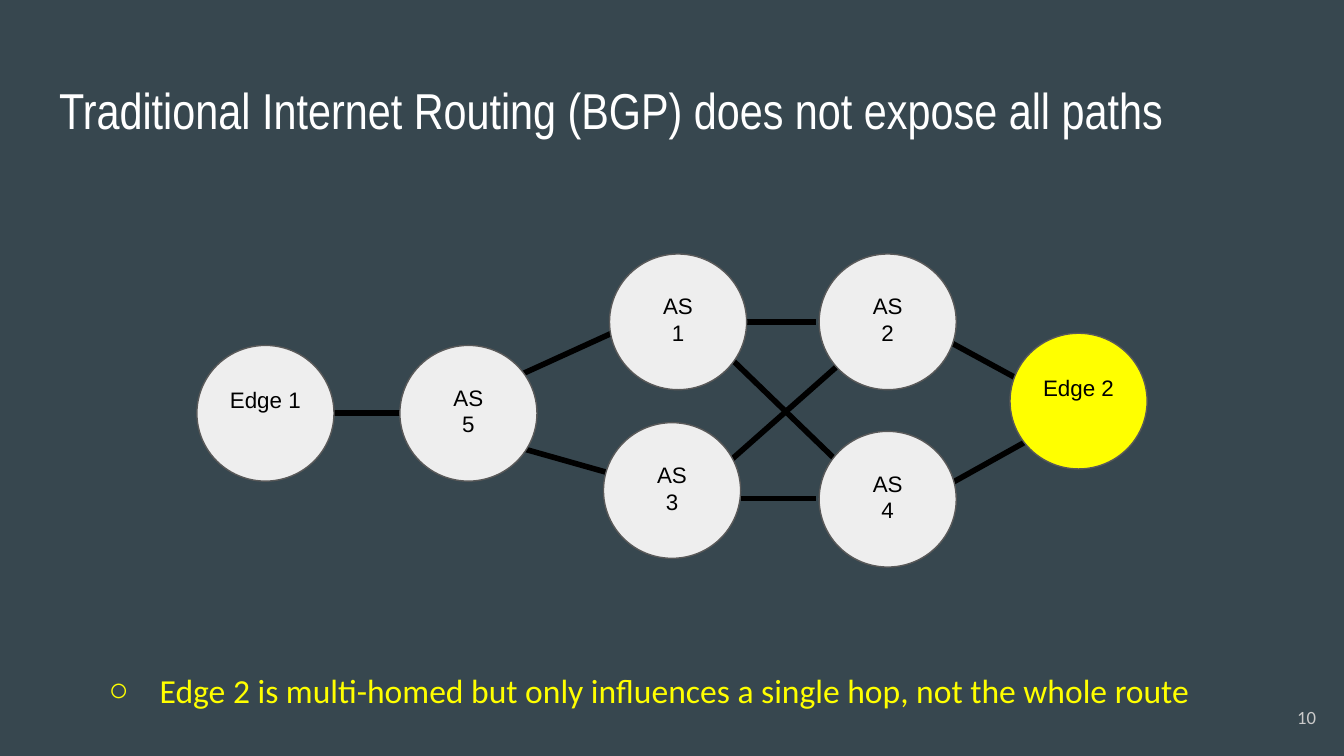
"""Build the slide on routing paths between two network edges."""
from dataclasses import dataclass

from lxml import etree
from pptx import Presentation
from pptx.dml.color import RGBColor
from pptx.enum import shapes, text
from pptx.oxml.ns import qn
from pptx.util import Emu, Pt

PX = 4572
WIDE, HIGH = 204, 202
ALIGN = text.PP_ALIGN


@dataclass
class Node:
    name: str
    x: int
    y: int
    fill: str = "EEEEEE"


@dataclass
class Link:
    x1: int
    y1: int
    x2: int
    y2: int


NODES = [
    Node("AS 2", 1219, 378),
    Node("AS 4", 1219, 642),
    Node("AS 1", 907, 378),
    Node("Edge 2", 1503, 496, "FFFF00"),
    Node("AS 5", 595, 514),
    Node("Edge 1", 293, 514),
    Node("AS 3", 898, 629),
]
LINKS = [
    Link(1084, 688, 1256, 536),
    Link(752, 568, 954, 476),
    Link(462, 615, 616, 615),
    Link(1102, 479, 1214, 479),
    Link(758, 662, 928, 710),
    Link(1102, 742, 1214, 742),
    Link(1084, 530, 1266, 706),
    Link(1408, 506, 1522, 568),
    Link(1396, 730, 1536, 652),
]


def px(n: int) -> Emu:
    return Emu(n * PX)


def paint(color, code: str) -> None:
    color.rgb = RGBColor.from_string(code)


def style(frame, size: int, face: str, code: str, align, anchor=text.MSO_ANCHOR.TOP) -> None:
    frame.word_wrap = True
    frame.auto_size = text.MSO_AUTO_SIZE.NONE
    frame.vertical_anchor = anchor
    frame.margin_left = frame.margin_right = px(20)
    frame.margin_top = frame.margin_bottom = px(20)
    for para in frame.paragraphs:
        para.alignment = align
        for run in para.runs:
            run.font.size = Pt(size)
            run.font.name = face
            paint(run.font.color, code)


def label(slide, words: str, box: tuple[int, int, int, int], *look):
    frame = slide.shapes.add_textbox(*map(px, box)).text_frame
    frame.text = words
    style(frame, *look)
    return frame


def draw_link(slide, link: Link) -> None:
    ends = map(px, (link.x1, link.y1, link.x2, link.y2))
    line = slide.shapes.add_connector(shapes.MSO_CONNECTOR.STRAIGHT, *ends)
    line.line.width = Pt(3)
    paint(line.line.color, "000000")
    etree.SubElement(line._element.spPr, qn("a:effectLst"))


def draw_node(slide, node: Node) -> None:
    disc = slide.shapes.add_shape(
        shapes.MSO_SHAPE.OVAL, px(node.x), px(node.y), px(WIDE), px(HIGH))
    disc.shadow.inherit = False
    disc.fill.solid()
    paint(disc.fill.fore_color, node.fill)
    disc.line.width = Pt(0.75)
    paint(disc.line.color, "595959")
    if node.name.startswith("AS"):
        box = (node.x + 49, node.y + 37, 106, 122)
    else:
        box = (node.x + 8, node.y + 41, 188, 80)
    label(slide, node.name, box, 12, "Arial", "000000", ALIGN.CENTER)


def add_bullet(para, mark: str, code: str) -> None:
    props = para._p.get_or_add_pPr()
    props.set("marL", str(px(150)))
    props.set("indent", str(px(-76)))
    tint = etree.SubElement(props, qn("a:buClr"))
    etree.SubElement(tint, qn("a:srgbClr"), val=code)
    etree.SubElement(props, qn("a:buFont"), typeface="Arial")
    etree.SubElement(props, qn("a:buChar"), char=mark)


def main() -> None:
    deck = Presentation()
    deck.slide_width, deck.slide_height = px(2000), px(1125)
    slide = deck.slides.add_slide(deck.slide_layouts[5])
    slide.background.fill.solid()
    paint(slide.background.fill.fore_color, "37474F")

    title = slide.shapes.title
    title.left, title.top, title.width, title.height = map(px, (68, 98, 1864, 126))
    title.text_frame.text = "Traditional Internet Routing (BGP) does not expose all paths"
    style(title.text_frame, 27, "Arial Narrow", "FFFFFF", ALIGN.LEFT)

    for link in LINKS:
        draw_link(slide, link)
    for node in NODES:
        draw_node(slide, node)

    note = label(
        slide, "Edge 2 is multi-homed but only influences a single hop, not the whole route",
        (68, 252, 1886, 825), 18, "Calibri", "FFFF00", ALIGN.LEFT, text.MSO_ANCHOR.BOTTOM)
    note.paragraphs[0].line_spacing = 1.15
    add_bullet(note.paragraphs[0], "○", "FFFF00")
    label(slide, "10", (1858, 1024, 120, 86), 10, "Calibri", "CACACA",
          ALIGN.RIGHT, text.MSO_ANCHOR.MIDDLE)
    deck.save("out.pptx")


if __name__ == "__main__":
    main()
